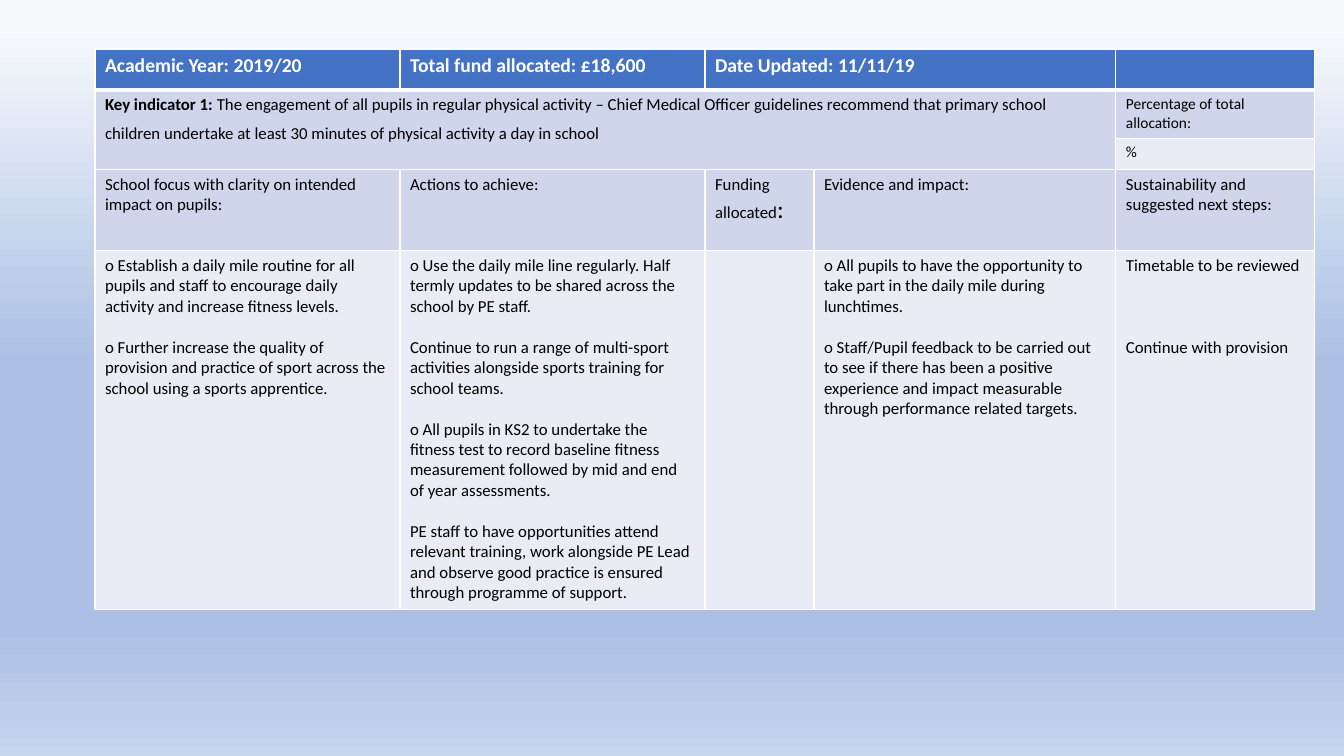
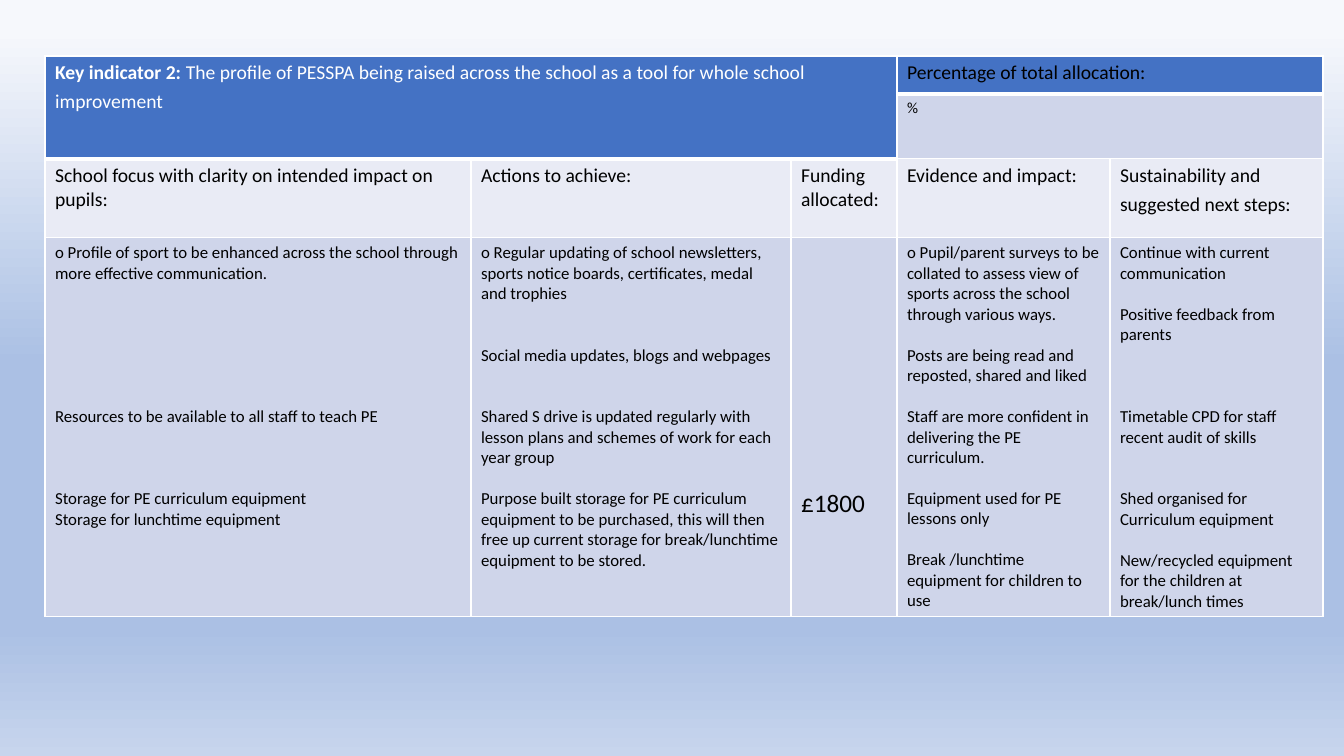
"""Build two slides of a school sport funding plan, each holding one table."""
import lxml.etree
import pptx
import pptx.dml.color
import pptx.oxml.ns
import pptx.util

PX = 914400 / 100.8
FONT = "Calibri"
WHITE = "FFFFFF"
BLACK = "000000"
FILLS = {"H": "4472C4", "D": "CFD5EA", "L": "E9EBF5"}
BACKGROUND = [(4, "F6F8FC"), (48, "ABC0E4"), (83, "ABC0E4"), (100, "C7D5ED")]
BODY_LINE = 14.65
LARGE_SPACE = (" ", 18, False)


def px(length):
    return pptx.util.Emu(round(length * PX))


def rgb(value):
    return pptx.dml.color.RGBColor.from_string(value)


PLANS = [
    {
        "left": 95, "top": 49,
        "columns": [305, 305, 109, 302, 199],
        "rows": [41, 48, 31, 81, 359],
        "kinds": ["HHHHH", "DDDDD", "DDDDL", "DDDDD", "LLLLL"],
        "merges": [((0, 2), (0, 3)), ((1, 0), (2, 3))],
        "cells": {
            (0, 0): [(0, [("Academic Year: 2019/20", 14, True)])],
            (0, 1): [(0, [("Total fund allocated: £18,600", 14, True)])],
            (0, 2): [(0, [("Date Updated: 11/11/19", 14, True)])],
            (1, 0): [(0, [
                ("Key indicator 1: ", 12, True),
                ("The engagement of all pupils in regular physical activity – Chief Medical "
                 "Officer guidelines recommend that primary school children undertake at "
                 "least 30 minutes of physical activity a day in school", 12, False),
                LARGE_SPACE])],
            (1, 4): [(0, [("Percentage of total allocation:", 11, False)])],
            (2, 4): [(0, [("%", 11, False)])],
            (3, 0): [(0, "School focus with clarity on intended impact on pupils:")],
            (3, 1): [(0, "Actions to achieve:")],
            (3, 2): [(0, [("Funding allocated", 12, False), (":", 18, False)])],
            (3, 3): [(0, "Evidence and impact:")],
            (3, 4): [(0, "Sustainability and suggested next steps:")],
            (4, 0): [
                (0, "o Establish a daily mile routine for all pupils and staff to encourage "
                    "daily activity and increase fitness levels."),
                (1, "o Further increase the quality of provision and practice of sport across "
                    "the school using a sports apprentice."),
            ],
            (4, 1): [
                (0, "o Use the daily mile line regularly. Half termly updates to be shared "
                    "across the school by PE staff."),
                (1, "Continue to run a range of multi-sport activities alongside sports "
                    "training for school teams."),
                (1, "o All pupils in KS2 to undertake the fitness test to record baseline "
                    "fitness measurement followed by mid and end of year assessments."),
                (1, "PE staff to have opportunities attend relevant training, work alongside "
                    "PE Lead and observe good practice is ensured through programme of support."),
            ],
            (4, 3): [
                (0, "o All pupils to have the opportunity to take part in the daily mile "
                    "during lunchtimes."),
                (1, "o Staff/Pupil feedback to be carried out to see if there has been a "
                    "positive experience and impact measurable through performance related "
                    "targets."),
            ],
            (4, 4): [(0, "Timetable to be reviewed"), (3, "Continue with provision")],
        },
        "dark_text": [],
        "top_margins": {},
    },
    {
        "left": 45, "top": 56,
        "columns": [426, 320, 106, 213, 213],
        "rows": [38, 64, 79, 379],
        "kinds": ["HHHHH", "HHHDD", "LLLLL", "DDDDD"],
        "merges": [((0, 0), (1, 2)), ((0, 3), (0, 4)), ((1, 3), (1, 4))],
        "cells": {
            (0, 0): [(0, [
                ("Key indicator 2: ", 14, True),
                ("The profile of PESSPA being raised across the school as a tool for whole "
                 "school improvement", 14, False),
                LARGE_SPACE])],
            (0, 3): [(0, [("Percentage of total allocation:", 14, False)])],
            (1, 3): [(0, [("%", 11, False)])],
            (2, 0): [(0, [("School focus with clarity on intended impact on pupils:", 14, False)])],
            (2, 1): [(0, [("Actions to achieve:", 14, False)])],
            (2, 2): [(0, [("Funding allocated:", 14, False)])],
            (2, 3): [(0, [("Evidence and impact:", 14, False)])],
            (2, 4): [(0, [("Sustainability and suggested next steps:", 14, False), LARGE_SPACE])],
            (3, 0): [
                (0, "o Profile of sport to be enhanced across the school through more "
                    "effective communication."),
                (6, "Resources to be available to all staff to teach PE"),
                (3, "Storage for PE curriculum equipment"),
                (0, "Storage for lunchtime equipment"),
            ],
            (3, 1): [
                (0, "o Regular updating of school newsletters, sports notice boards, "
                    "certificates, medal and trophies"),
                (2, "Social media updates, blogs and webpages"),
                (2, "Shared S drive is updated regularly with lesson plans and schemes of "
                    "work for each year group"),
                (1, "Purpose built storage for PE curriculum equipment to be purchased, this "
                    "will then free up current storage for break/lunchtime equipment to be "
                    "stored."),
            ],
            (3, 2): [(0, [("£1800", 18, False)])],
            (3, 3): [
                (0, "o Pupil/parent surveys to be collated to assess view of sports across "
                    "the school through various ways."),
                (1, "Posts are being read and reposted, shared and liked"),
                (1, "Staff are more confident in delivering the PE curriculum."),
                (1, "Equipment used for PE lessons only"),
                (1, "Break /lunchtime equipment for children to use"),
            ],
            (3, 4): [
                (0, "Continue with current communication"),
                (1, "Positive feedback from parents"),
                (3, "Timetable CPD for staff recent audit of skills"),
                (2, "Shed organised for Curriculum equipment"),
                (1, "New/recycled equipment for the children at break/lunch times"),
            ],
        },
        "dark_text": [(0, 3)],
        "top_margins": {(3, 2): 251},
    },
]

qn = pptx.oxml.ns.qn
deck = pptx.Presentation()
deck.slide_width = px(1344)
deck.slide_height = px(756)

backdrop = deck.slide_master.background.fill
backdrop.gradient()
backdrop.gradient_angle = 270
stops = deck.slide_master.element.find(".//" + qn("a:gsLst"))
for stop in list(stops):
    stops.remove(stop)
for position, colour in BACKGROUND:
    stop = lxml.etree.SubElement(stops, qn("a:gs"), pos=str(position * 1000))
    lxml.etree.SubElement(stop, qn("a:srgbClr"), val=colour)

for plan in PLANS:
    page = deck.slides.add_slide(deck.slide_layouts[6])
    columns, rows, kinds = plan["columns"], plan["rows"], plan["kinds"]
    table = page.shapes.add_table(
        len(rows), len(columns), px(plan["left"]), px(plan["top"]),
        px(sum(columns)), px(sum(rows))).table
    table.first_row = False
    table.horz_banding = False
    for column, width in zip(table.columns, columns):
        column.width = px(width)
    for row, height in zip(table.rows, rows):
        row.height = px(height)
    for first, last in plan["merges"]:
        table.cell(*first).merge(table.cell(*last))

    for row_index, row_kinds in enumerate(kinds):
        for column_index, kind in enumerate(row_kinds):
            place = (row_index, column_index)
            cell = table.cell(*place)
            is_header = kind == "H"
            below_header = row_index > 0 and kinds[row_index - 1][column_index] == "H"
            borders = {"lnL": 1, "lnR": 1,
                       "lnT": 3 if below_header and not is_header else 1,
                       "lnB": 3 if is_header else 1}
            properties = cell._tc.get_or_add_tcPr()
            for side, points in borders.items():
                line = lxml.etree.SubElement(properties, qn("a:" + side), w=str(points * 12700))
                paint = lxml.etree.SubElement(line, qn("a:solidFill"))
                lxml.etree.SubElement(paint, qn("a:srgbClr"), val=WHITE)
            cell.fill.solid()
            cell.fill.fore_color.rgb = rgb(FILLS[kind])
            if place in plan["top_margins"]:
                cell.margin_top = px(plan["top_margins"][place])

            text_colour = WHITE if is_header and place not in plan["dark_text"] else BLACK
            for index, (blank_lines, content) in enumerate(plan["cells"].get(place, [])):
                frame = cell.text_frame
                para = frame.add_paragraph() if index else frame.paragraphs[0]
                if blank_lines:
                    para.space_before = pptx.util.Pt(blank_lines * BODY_LINE)
                spans = [(content, 12, False)] if isinstance(content, str) else content
                for text, size, bold in spans:
                    span = para.add_run()
                    span.text = text
                    span.font.name = FONT
                    span.font.size = pptx.util.Pt(size)
                    span.font.bold = bold
                    span.font.color.rgb = rgb(text_colour)

deck.save("out.pptx")
